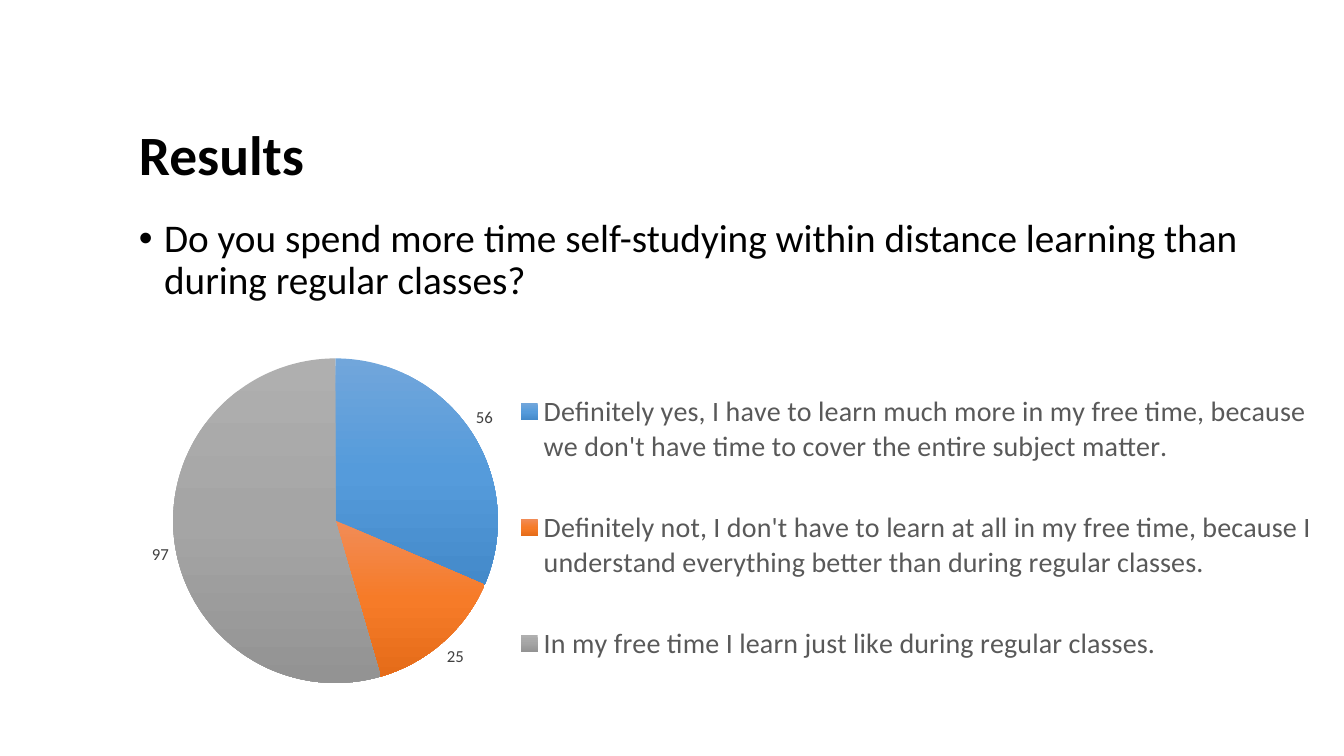
from dataclasses import dataclass

from lxml import etree
from pptx import Presentation
from pptx.chart.data import CategoryChartData
from pptx.dml.color import RGBColor
from pptx.enum.chart import XL_CHART_TYPE, XL_LABEL_POSITION, XL_LEGEND_POSITION
from pptx.enum.text import MSO_ANCHOR
from pptx.oxml.ns import qn
from pptx.util import Inches, Pt

PIE = XL_CHART_TYPE.PIE
OUTSIDE = XL_LABEL_POSITION.OUTSIDE_END
RIGHT = XL_LEGEND_POSITION.RIGHT
TOP, MIDDLE = MSO_ANCHOR.TOP, MSO_ANCHOR.MIDDLE

QUESTION = ("Do you spend more time self-studying within distance learning "
            "than during regular classes?")
ANSWERS = {
    "Definitely yes, I have to learn much more in my free time, because "
    "we don't have time to cover the entire subject matter.": 56,
    "Definitely not, I don't have to learn at all in my free time, because "
    "I understand everything better than during regular classes.": 25,
    "In my free time I learn just like during regular classes.": 97,
}


@dataclass(frozen=True)
class Theme:
    """Fonts, colours and type sizes of the slide."""
    font: str = "Calibri"
    ink: str = "000000"
    legend_ink: str = "595959"
    label_ink: str = "404040"
    title_size: float = 39.6
    body_size: float = 28
    legend_size: float = 20
    label_size: float = 12
    slices: tuple = (("71A6DB", "559BDB", "448ACA"),
                     ("F18C57", "F67B28", "E56C19"),
                     ("AFAFAF", "A5A5A5", "939393"))


def set_font(font, name, size, color, bold=False):
    """Apply typeface, size, colour and weight to a font."""
    font.name, font.size, font.bold = name, Pt(size), bold
    font.color.rgb = RGBColor.from_string(color)


def write_text(frame, text, *, name, size, color, bold=False, bullet=None):
    """Write one paragraph into a text frame, with an optional bullet."""
    para = frame.paragraphs[0]
    para.line_spacing = 0.9
    if bullet:
        properties = para._p.get_or_add_pPr()
        properties.set("marL", str(Inches(0.25)))
        properties.set("indent", str(Inches(-0.25)))
        etree.SubElement(properties, qn("a:buFont"), typeface="Arial")
        etree.SubElement(properties, qn("a:buChar"), char=bullet)
    span = para.add_run()
    span.text = text
    set_font(span.font, name, size, color, bold)


def fill_gradient(point, colors):
    """Fill a pie slice with evenly spaced stops from top to bottom."""
    point.format.line.fill.background()
    point.format.fill.gradient()
    gradient = point.format.fill._xPr.find(qn("a:gradFill"))
    for child in list(gradient):
        gradient.remove(child)
    stops = etree.SubElement(gradient, qn("a:gsLst"))
    for index, color in enumerate(colors):
        position = index * 100000 // (len(colors) - 1)
        stop = etree.SubElement(stops, qn("a:gs"), pos=str(position))
        etree.SubElement(stop, qn("a:srgbClr"), val=color)
    etree.SubElement(gradient, qn("a:lin"), ang="5400000", scaled="0")


def set_layout(parent, index, left, top, width, height, inner=False):
    """Place a chart part by fractions of the chart area."""
    for old in parent.findall(qn("c:layout")):
        parent.remove(old)
    layout = etree.Element(qn("c:layout"))
    manual = etree.SubElement(layout, qn("c:manualLayout"))
    if inner:
        etree.SubElement(manual, qn("c:layoutTarget"), val="inner")
    for tag in ("xMode", "yMode"):
        etree.SubElement(manual, qn(f"c:{tag}"), val="edge")
    for tag, value in zip("xywh", (left, top, width, height)):
        etree.SubElement(manual, qn(f"c:{tag}"), val=str(value))
    parent.insert(index, layout)


class SlideBuilder:
    """Holds the theme and the current slide."""

    def __init__(self, slide, theme):
        """Keep the slide and its style."""
        self.slide, self.theme = slide, theme

    def text(self, text, left, top, width, height, *, anchor=TOP, **style):
        """Add a wrapped text box."""
        box = self.slide.shapes.add_textbox(
            Inches(left), Inches(top), Inches(width), Inches(height))
        box.text_frame.word_wrap = True
        box.text_frame.vertical_anchor = anchor
        write_text(box.text_frame, text, name=self.theme.font,
                   color=self.theme.ink, **style)

    def pie(self, answers, left, top, width, height):
        """Add a pie chart with value labels and a legend on the right."""
        theme = self.theme
        data = CategoryChartData()
        data.categories = list(answers)
        data.add_series("Series 1", list(answers.values()))
        chart = self.slide.shapes.add_chart(
            PIE, Inches(left), Inches(top), Inches(width), Inches(height),
            data).chart
        chart.has_title = False
        set_font(chart.font, theme.font, 10, theme.ink)
        chart.has_legend = True
        legend = chart.legend
        legend.position, legend.include_in_layout = RIGHT, False
        set_font(legend.font, theme.font, theme.legend_size, theme.legend_ink)
        set_layout(legend._element, 1, 0.325, 0.066, 0.67, 0.93)

        plot = chart.plots[0]
        plot.vary_by_categories = True
        set_layout(plot._element.getparent(), 0,
                   0.047, 0.093, 0.268, 0.841, inner=True)
        plot.has_data_labels = True
        labels = plot.data_labels
        labels.show_value, labels.show_percentage = True, False
        labels.position = OUTSIDE
        set_font(labels.font, theme.font, theme.label_size, theme.label_ink)
        for index, colors in enumerate(theme.slices):
            fill_gradient(plot.series[0].points[index], colors)


def main():
    """Build the results slide and save it."""
    deck = Presentation()
    deck.slide_width, deck.slide_height = Inches(13.33), Inches(7.5)
    theme = Theme()
    page = SlideBuilder(deck.slides.add_slide(deck.slide_layouts[6]), theme)
    page.text("Results", 1.28, 1.2, 11.5, 0.73, anchor=MIDDLE,
              size=theme.title_size, bold=True)
    page.text(QUESTION, 1.28, 2.12, 11.89, 4.29,
              size=theme.body_size, bullet="•")
    page.pie(ANSWERS, 1.15, 3.2, 12.03, 3.83)
    deck.save("out.pptx")


if __name__ == "__main__":
    main()
